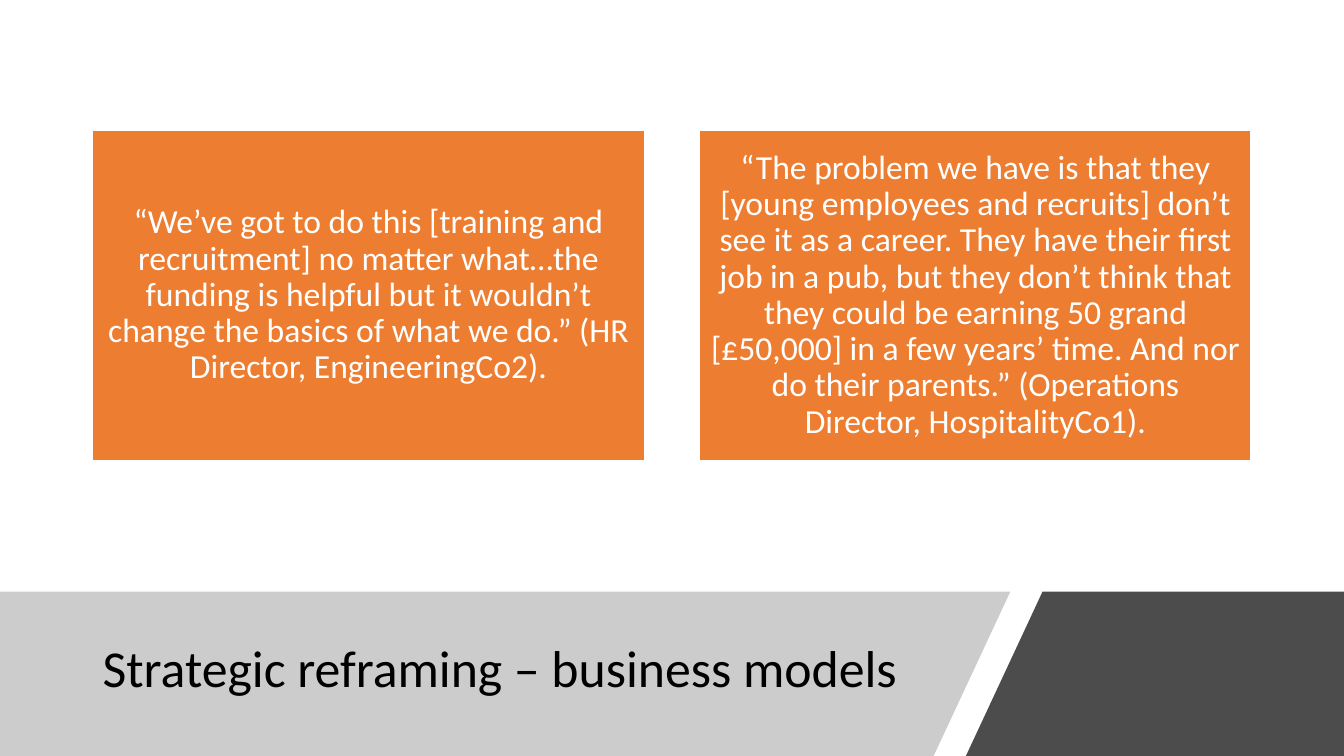
from lxml.etree import SubElement
from pptx import Presentation
from pptx.dml.color import RGBColor
from pptx.enum.shapes import MSO_SHAPE
from pptx.enum.text import MSO_ANCHOR, PP_ALIGN
from pptx.oxml.ns import qn
from pptx.util import Inches, Pt

FONT = "Calibri"
WIDTH, HEIGHT = 13.33, 7.5
BAND_TOP = 5.87
CARD_LEFT, CARD_TOP, CARD_WIDTH, CARD_HEIGHT = 0.92, 1.29, 5.47, 3.28
CARD_GAP = 0.55

QUOTES = [
    "“We’ve got to do this [training and recruitment] no matter what…the "
    "funding is helpful but it wouldn’t change the basics of what we do.” "
    "(HR Director, EngineeringCo2).",
    "“The problem we have is that they [young employees and recruits] don’t "
    "see it as a career. They have their first job in a pub, but they don’t "
    "think that they could be earning 50 grand [£50,000] in a few years’ time. "
    "And nor do their parents.” (Operations Director, HospitalityCo1).",
]


def set_fill(shape, color):
    shape.fill.solid()
    shape.fill.fore_color.rgb = RGBColor.from_string(color)


def add_band(page, points, color, opacity):
    """Draw a borderless, partly transparent polygon."""
    builder = page.shapes.build_freeform(
        Inches(points[0][0]), Inches(points[0][1]))
    builder.add_line_segments(
        [(Inches(x), Inches(y)) for x, y in points[1:]], close=True)
    band = builder.convert_to_shape()
    band.shadow.inherit = False
    band.line.fill.background()
    set_fill(band, color)
    color_node = band.fill._xPr.find(".//" + qn("a:srgbClr"))
    SubElement(color_node, qn("a:alpha"), val=str(opacity * 1000))


def write_text(shape, text, size, color, align):
    frame = shape.text_frame
    frame.word_wrap = True
    frame.vertical_anchor = MSO_ANCHOR.MIDDLE
    para = frame.paragraphs[0]
    para.text = text
    para.alignment = align
    para.line_spacing = 0.9
    para.font.name = FONT
    para.font.size = Pt(size)
    para.font.color.rgb = RGBColor.from_string(color)


def add_title(page, text):
    box = page.shapes.add_textbox(
        Inches(0.92), Inches(6.05), Inches(8.44), Inches(1.2))
    write_text(box, text, 37, "000000", PP_ALIGN.LEFT)


def add_card(page, left, text):
    card = page.shapes.add_shape(
        MSO_SHAPE.RECTANGLE, Inches(left), Inches(CARD_TOP),
        Inches(CARD_WIDTH), Inches(CARD_HEIGHT))
    card.shadow.inherit = False
    set_fill(card, "ED7D31")
    card.line.color.rgb = RGBColor.from_string("FFFFFF")
    card.line.width = Pt(1)
    frame = card.text_frame
    frame.margin_left = frame.margin_right = Inches(0.1)
    frame.margin_top = frame.margin_bottom = Inches(0.1)
    write_text(card, text, 24, "FFFFFF", PP_ALIGN.CENTER)


def main():
    deck = Presentation()
    deck.slide_width, deck.slide_height = Inches(WIDTH), Inches(HEIGHT)
    page = deck.slides.add_slide(deck.slide_layouts[6])

    # Title band and slanted corner
    add_band(page, [(0, BAND_TOP), (10.02, BAND_TOP), (9.26, HEIGHT),
                    (0, HEIGHT)], "808080", 40)
    add_title(page, "Strategic reframing – business models")
    add_band(page, [(10.34, BAND_TOP), (WIDTH, BAND_TOP), (WIDTH, HEIGHT),
                    (9.58, HEIGHT)], "000000", 70)

    # Quote cards
    for index, quote in enumerate(QUOTES):
        add_card(page, CARD_LEFT + index * (CARD_WIDTH + CARD_GAP), quote)

    deck.save("out.pptx")


if __name__ == "__main__":
    main()
